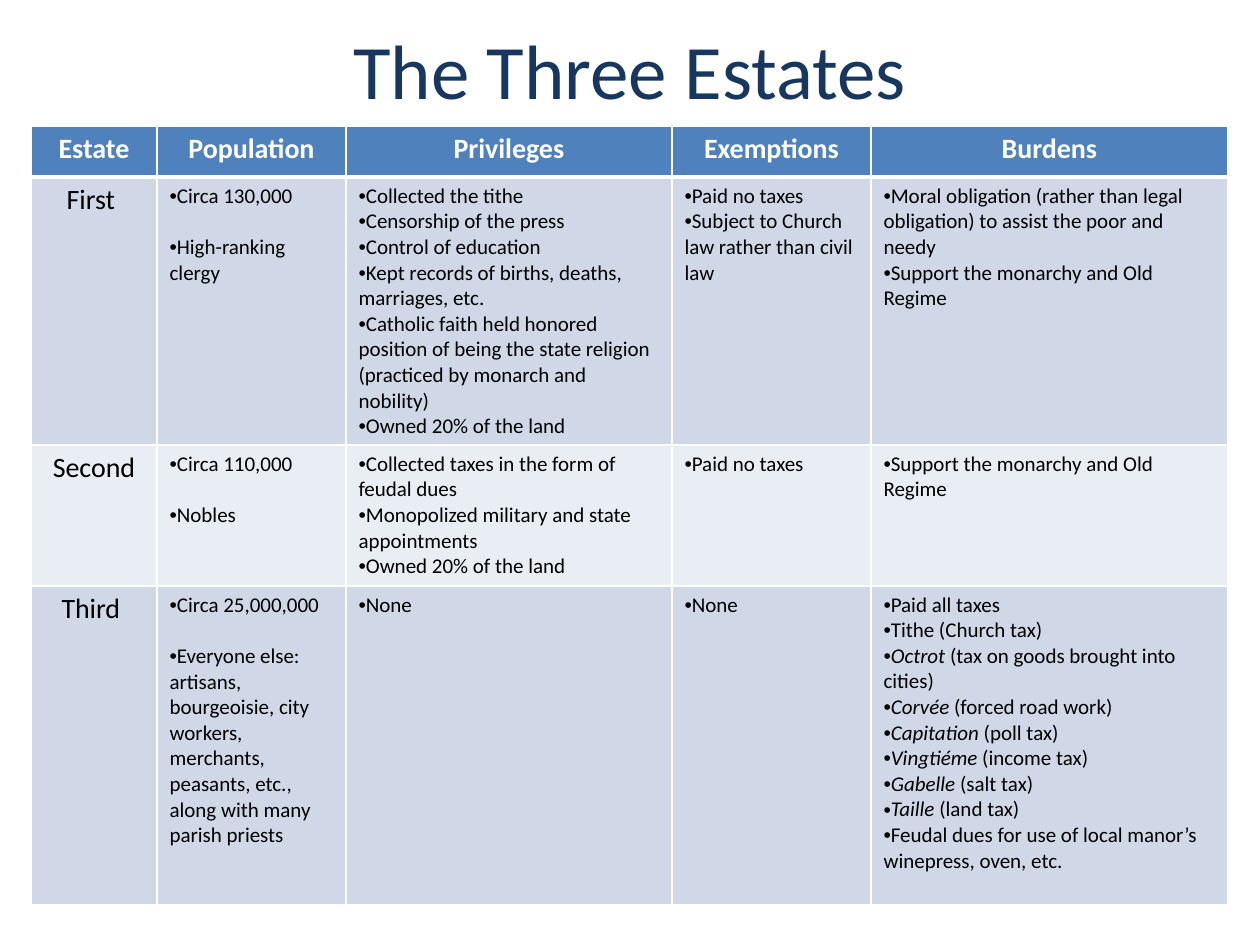
from lxml import etree
from pptx import Presentation
from pptx.dml.color import RGBColor
from pptx.enum.text import MSO_ANCHOR, PP_ALIGN
from pptx.oxml.ns import qn
from pptx.util import Pt

EMU_PER_PX = 914400 / 126
CENTER, LEFT = PP_ALIGN.CENTER, PP_ALIGN.LEFT
MIDDLE = MSO_ANCHOR.MIDDLE
FONT, BULLET_FONT = "Calibri", "Arial"
NAVY, BLUE, WHITE, BLACK = "17375E", "4F81BD", "FFFFFF", "000000"
BAND_DARK, BAND_LIGHT = "D0D8E8", "E9EDF4"
POPULATION_COLUMN = 1
POPULATION_GAP = 14.65  # points, one line of 12 pt text

COLUMN_WIDTHS = [126, 189, 326, 199, 357]
ROW_HEIGHTS = [51, 268, 141, 319]
HEADINGS = ["Estate", "Population", "Privileges", "Exemptions", "Burdens"]
# Each estate: name, then one list of bullets per column.
# A pair is an italic term and its explanation.
ESTATES = [
    ("First ",
     ["Circa 130,000", "High-ranking clergy"],
     ["Collected the tithe",
      "Censorship of the press",
      "Control of education",
      "Kept records of births, deaths, marriages, etc.",
      "Catholic faith held honored position of being the state religion "
      "(practiced by monarch and nobility)",
      "Owned 20% of the land"],
     ["Paid no taxes", "Subject to Church law rather than civil law"],
     ["Moral obligation (rather than legal obligation) to assist the poor and needy",
      "Support the monarchy and Old Regime"]),
    ("Second",
     ["Circa 110,000", "Nobles"],
     ["Collected taxes in the form of feudal dues",
      "Monopolized military and state appointments",
      "Owned 20% of the land"],
     ["Paid no taxes"],
     ["Support the monarchy and Old Regime"]),
    ("Third ",
     ["Circa 25,000,000",
      "Everyone else: artisans, bourgeoisie, city workers, merchants, "
      "peasants, etc., along with many parish priests"],
     ["None"],
     ["None"],
     ["Paid all taxes",
      "Tithe (Church tax)",
      ("Octrot", " (tax on goods brought into cities)"),
      ("Corvée", " (forced road work)"),
      ("Capitation", " (poll tax)"),
      ("Vingtiéme", " (income tax)"),
      ("Gabelle", " (salt tax)"),
      ("Taille", " (land tax)"),
      "Feudal dues for use of local manor’s winepress, oven, etc."]),
]


def px(length):
    return round(length * EMU_PER_PX)


def color(hex_string):
    return RGBColor.from_string(hex_string)


def style_paragraph(paragraph, size, hex_color, alignment=LEFT, bold=False):
    paragraph.alignment = alignment
    font = paragraph.font
    font.name, font.size, font.bold = FONT, Pt(size), bold
    font.color.rgb = color(hex_color)


def style_cell(cell, hex_color, top=1, bottom=1):
    """Draw white borders, with top and bottom widths in points, and fill the cell."""
    properties = cell._tc.get_or_add_tcPr()
    for side, width in (("L", 1), ("R", 1), ("T", top), ("B", bottom)):
        line = etree.SubElement(properties, qn(f"a:ln{side}"), w=str(Pt(width)))
        fill = etree.SubElement(line, qn("a:solidFill"))
        etree.SubElement(fill, qn("a:srgbClr"), val=WHITE)
    cell.fill.solid()
    cell.fill.fore_color.rgb = color(hex_color)


def write_label(cell, text, hex_color, bold=False):
    paragraph = cell.text_frame.paragraphs[0]
    paragraph.text = text
    style_paragraph(paragraph, 16, hex_color, CENTER, bold)


def write_bullets(cell, items, gap):
    """Write one bullet per item, with gap points between them."""
    frame = cell.text_frame
    for index, item in enumerate(items):
        paragraph = frame.paragraphs[0] if index == 0 else frame.add_paragraph()
        if index and gap:
            paragraph.space_before = Pt(gap)
        properties = paragraph._p.get_or_add_pPr()
        etree.SubElement(properties, qn("a:buFont"), typeface=BULLET_FONT)
        etree.SubElement(properties, qn("a:buChar"), char="•")
        style_paragraph(paragraph, 12, BLACK)
        if isinstance(item, tuple):
            term, explanation = item
            run = paragraph.add_run()
            run.text = term
            run.font.italic = True
            paragraph.add_run().text = explanation
        else:
            paragraph.add_run().text = item


def add_title(slide, left, top, width, height):
    box = slide.shapes.add_textbox(px(left), px(top), px(width), px(height))
    frame = box.text_frame
    frame.word_wrap = True
    frame.vertical_anchor = MIDDLE
    paragraph = frame.paragraphs[0]
    paragraph.text = "The Three Estates"
    style_paragraph(paragraph, 44, NAVY, CENTER)


def add_estates_table(slide, left, top):
    table = slide.shapes.add_table(
        len(ROW_HEIGHTS), len(COLUMN_WIDTHS), px(left), px(top),
        px(sum(COLUMN_WIDTHS)), px(sum(ROW_HEIGHTS))).table
    for column, width in zip(table.columns, COLUMN_WIDTHS):
        column.width = px(width)
    for row, height in zip(table.rows, ROW_HEIGHTS):
        row.height = px(height)

    for column, heading in enumerate(HEADINGS):
        cell = table.cell(0, column)
        style_cell(cell, BLUE, bottom=3)
        write_label(cell, heading, WHITE, bold=True)

    for row, (name, *bullet_lists) in enumerate(ESTATES, start=1):
        for cell in table.rows[row].cells:
            style_cell(cell, BAND_DARK if row % 2 else BAND_LIGHT,
                       top=3 if row == 1 else 1)
        write_label(table.cell(row, 0), name, BLACK)
        for column, items in enumerate(bullet_lists, start=1):
            gap = POPULATION_GAP if column == POPULATION_COLUMN else 0
            write_bullets(table.cell(row, column), items, gap)


def main():
    presentation = Presentation()
    presentation.slide_width, presentation.slide_height = px(1260), px(945)
    slide = presentation.slides.add_slide(presentation.slide_layouts[6])
    add_title(slide, 63, 0, 1134, 137)
    add_estates_table(slide, 31, 126)
    presentation.save("out.pptx")


if __name__ == "__main__":
    main()
